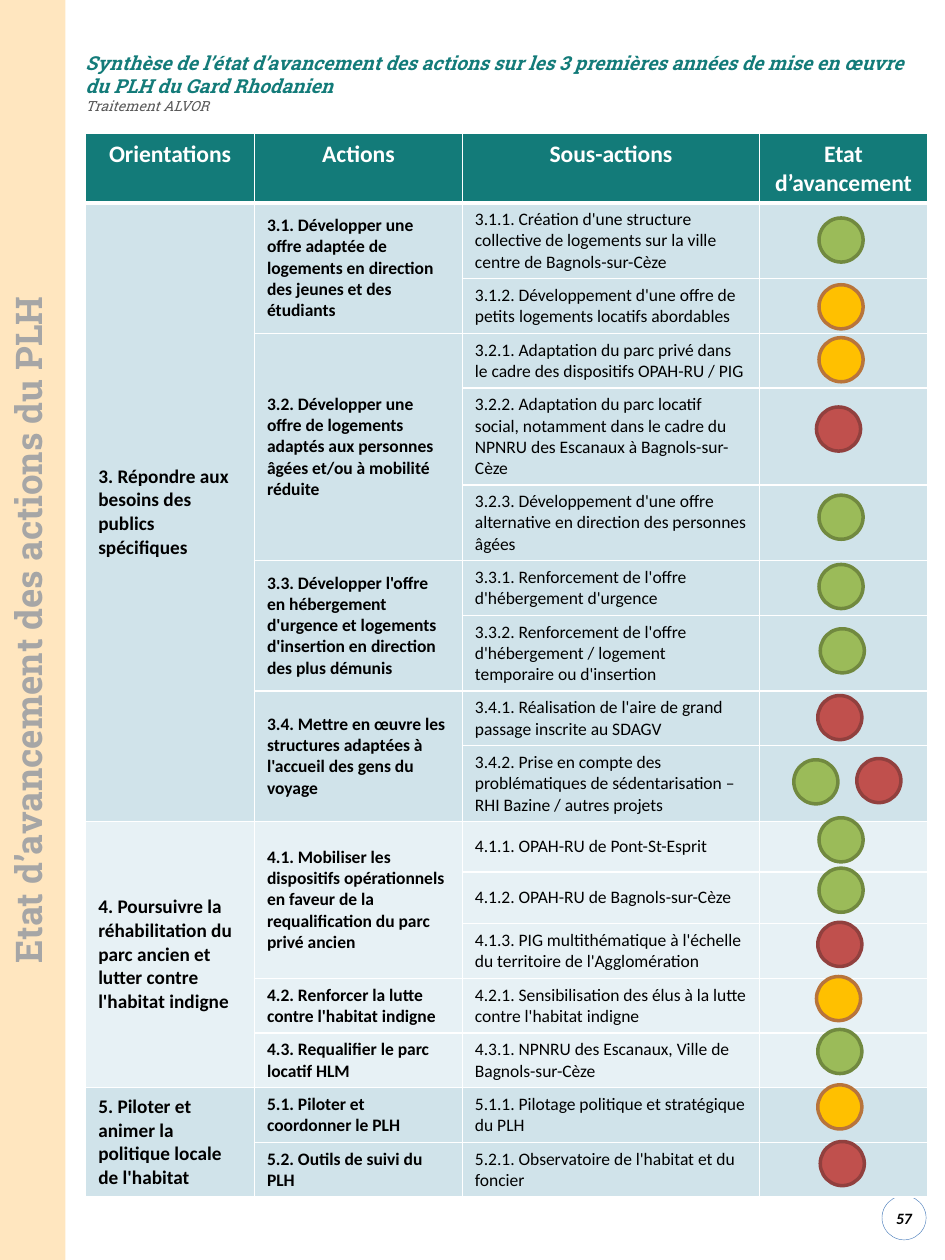
from dataclasses import dataclass

from lxml import etree
from pptx import Presentation
from pptx.dml.color import RGBColor
from pptx.enum.shapes import MSO_SHAPE
from pptx.enum.text import MSO_ANCHOR, PP_ALIGN
from pptx.oxml.ns import qn
from pptx.util import Inches, Pt

OVAL, RECTANGLE = MSO_SHAPE.OVAL, MSO_SHAPE.RECTANGLE
MIDDLE, TOP = MSO_ANCHOR.MIDDLE, MSO_ANCHOR.TOP
LEFT, CENTER = PP_ALIGN.LEFT, PP_ALIGN.CENTER


@dataclass(frozen=True)
class Theme:
    body_font: str = "Calibri"
    title_font: str = "Roboto Slab"
    teal: str = "137B79"
    white: str = "FFFFFF"
    black: str = "000000"
    grey: str = "A6A6A6"
    dark_grey: str = "595959"
    sidebar: str = "FF9D00"
    page_ring: str = "4F81BD"
    band_dark: str = "D0E3EA"
    band_light: str = "E7F1F5"
    sidebar_size: float = 21
    header_size: float = 13.5
    title_size: float = 11
    orientation_size: float = 11
    body_size: float = 10
    page_size: float = 9
    credit_size: float = 8
    grid_width: float = 0.96
    header_rule: float = 3


THEME = Theme()
STATUS = {  # fill, outline
    "done": ("9BBB59", "71893F"),
    "ongoing": ("FFC000", "B8743B"),
    "late": ("C0504D", "91403E"),
}

HEADERS = ["Orientations", "Actions", "Sous-actions", "Etat d’avancement"]
COLUMN_WIDTHS = [1.34, 1.65, 2.36, 1.33]
ROW_HEIGHTS = [0.47, 0.51, 0.41, 0.41, 0.66, 0.51, 0.41, 0.51, 0.41, 0.51, 0.35] + [0.41] * 6
PLAN = [  # orientation, fill, [(action, [sub-actions])]
    ("3. Répondre aux besoins des publics spécifiques", THEME.band_dark, [
        ("3.1. Développer une offre adaptée de logements en direction des jeunes et des étudiants", [
            "3.1.1. Création d'une structure collective de logements sur la ville centre de Bagnols-sur-Cèze",
            "3.1.2. Développement d'une offre de petits logements locatifs abordables"]),
        ("3.2. Développer une offre de logements adaptés aux personnes âgées et/ou à mobilité réduite", [
            "3.2.1. Adaptation du parc privé dans le cadre des dispositifs OPAH-RU / PIG",
            "3.2.2. Adaptation du parc locatif social, notamment dans le cadre du NPNRU "
            "des Escanaux à Bagnols-sur-Cèze",
            "3.2.3. Développement d'une offre alternative en direction des personnes âgées"]),
        ("3.3. Développer l'offre en hébergement d'urgence et logements d'insertion "
         "en direction des plus démunis", [
            "3.3.1. Renforcement de l'offre d'hébergement d'urgence",
            "3.3.2. Renforcement de l'offre d'hébergement / logement temporaire ou d'insertion"]),
        ("3.4. Mettre en œuvre les structures adaptées à l'accueil des gens du voyage", [
            "3.4.1. Réalisation de l'aire de grand passage inscrite au SDAGV",
            "3.4.2. Prise en compte des problématiques de sédentarisation – RHI Bazine / autres projets"]),
    ]),
    ("4. Poursuivre la réhabilitation du parc ancien et lutter contre l'habitat indigne", THEME.band_light, [
        ("4.1. Mobiliser les dispositifs opérationnels en faveur de la requalification du parc privé ancien", [
            "4.1.1. OPAH-RU de Pont-St-Esprit",
            "4.1.2. OPAH-RU de Bagnols-sur-Cèze",
            "4.1.3. PIG multithématique à l'échelle du territoire de l'Agglomération"]),
        ("4.2. Renforcer la lutte contre l'habitat indigne", [
            "4.2.1. Sensibilisation des élus à la lutte contre l'habitat indigne"]),
        ("4.3. Requalifier le parc locatif HLM", [
            "4.3.1. NPNRU des Escanaux, Ville de Bagnols-sur-Cèze"]),
    ]),
    ("5. Piloter et animer la politique locale de l'habitat", THEME.band_dark, [
        ("5.1. Piloter et coordonner le PLH", ["5.1.1. Pilotage politique et stratégique du PLH"]),
        ("5.2. Outils de suivi du PLH", ["5.2.1. Observatoire de l'habitat et du foncier"]),
    ]),
]
DOTS = [  # status, left and top inside the last column
    ("done", 0.47, 0.67), ("ongoing", 0.47, 1.2), ("ongoing", 0.47, 1.62), ("late", 0.45, 2.17),
    ("done", 0.47, 2.87), ("done", 0.47, 3.42), ("done", 0.48, 3.93), ("late", 0.46, 4.46),
    ("done", 0.27, 4.97), ("late", 0.77, 4.96), ("done", 0.47, 5.43), ("done", 0.47, 5.83),
    ("late", 0.46, 6.26), ("ongoing", 0.45, 6.69), ("done", 0.46, 7.11), ("ongoing", 0.46, 7.55),
    ("late", 0.48, 8.0),
]
DOT_SIZE = 0.35


def inches(box):
    return [Inches(value) for value in box]


def write(paragraph, text, *, size, color, font=THEME.body_font, bold=False, italic=False, align=LEFT):
    paragraph.alignment = align
    run = paragraph.add_run()
    run.text = text
    run.font.name = font
    run.font.size = Pt(size)
    run.font.bold = bold
    run.font.italic = italic
    run.font.color.rgb = RGBColor.from_string(color)


def add_plain_shape(slide, kind, box, *, fill=None, line=None, line_width=0):
    shape = slide.shapes.add_shape(kind, *inches(box))
    shape.shadow.inherit = False
    if fill:
        shape.fill.solid()
        shape.fill.fore_color.rgb = RGBColor.from_string(fill)
    else:
        shape.fill.background()
    if line:
        shape.line.color.rgb = RGBColor.from_string(line)
        shape.line.width = Pt(line_width)
    else:
        shape.line.fill.background()
    return shape


def add_page_number(slide, box, number):
    ring = add_plain_shape(slide, OVAL, box, line=THEME.page_ring, line_width=0.25)
    frame = ring.text_frame
    frame.margin_left = frame.margin_right = frame.margin_top = frame.margin_bottom = 0
    frame.vertical_anchor = MIDDLE
    write(frame.paragraphs[0], number, size=THEME.page_size, color=THEME.black,
          bold=True, italic=True, align=CENTER)


def add_sidebar(slide, box, text):
    left, top, width, height = box
    band = add_plain_shape(slide, RECTANGLE, box, fill=THEME.sidebar)
    color = band.fill._xPr.find(".//" + qn("a:srgbClr"))
    etree.SubElement(color, qn("a:alpha"), val="25000")
    offset = (height - width) / 2
    label = slide.shapes.add_textbox(*inches((left - offset, top + offset, height, width)))
    label.rotation = 270
    label.text_frame.word_wrap = True
    write(label.text_frame.paragraphs[0], text, size=THEME.sidebar_size, color=THEME.grey,
          font=THEME.title_font, bold=True, align=CENTER)


def add_heading(slide, box, title, credit):
    frame = slide.shapes.add_textbox(*inches(box)).text_frame
    frame.word_wrap = True
    write(frame.paragraphs[0], title, size=THEME.title_size, color=THEME.teal,
          font=THEME.title_font, bold=True, italic=True)
    write(frame.add_paragraph(), credit, size=THEME.credit_size, color=THEME.dark_grey,
          font=THEME.title_font, italic=True)


def style_cell(cell, fill, thick_side=None):
    """Draw white borders, with one optional thick side, then fill the cell."""
    properties = cell._tc.get_or_add_tcPr()
    for side in "LRTB":
        width = THEME.header_rule if side == thick_side else THEME.grid_width
        line = etree.SubElement(properties, qn(f"a:ln{side}"), w=str(Pt(width)))
        solid = etree.SubElement(line, qn("a:solidFill"))
        etree.SubElement(solid, qn("a:srgbClr"), val=THEME.white)
    cell.fill.solid()
    cell.fill.fore_color.rgb = RGBColor.from_string(fill)


def write_cell(cell, text, anchor=MIDDLE, **text_format):
    cell.vertical_anchor = anchor
    write(cell.text_frame.paragraphs[0], text, **text_format)


def add_progress_table(slide, box):
    table = slide.shapes.add_table(len(ROW_HEIGHTS), len(HEADERS), *inches(box)).table
    table.horz_banding = False
    for column, width in zip(table.columns, COLUMN_WIDTHS):
        column.width = Inches(width)
    for row, height in zip(table.rows, ROW_HEIGHTS):
        row.height = Inches(height)
    for index, header in enumerate(HEADERS):
        cell = table.cell(0, index)
        style_cell(cell, THEME.teal, "B")
        write_cell(cell, header, TOP, size=THEME.header_size, color=THEME.white, bold=True, align=CENTER)

    body = {"size": THEME.body_size, "color": THEME.black}
    row = 1
    for orientation, fill, actions in PLAN:
        first_row = row
        for action, sub_actions in actions:
            action_row = row
            for sub_action in sub_actions:
                for index in range(len(HEADERS)):
                    style_cell(table.cell(row, index), fill, "T" if row == 1 else None)
                write_cell(table.cell(row, 2), sub_action, **body)
                row += 1
            write_cell(table.cell(action_row, 1), action, bold=True, **body)
            if row - action_row > 1:
                table.cell(action_row, 1).merge(table.cell(row - 1, 1))
        write_cell(table.cell(first_row, 0), orientation, size=THEME.orientation_size,
                   color=THEME.black, bold=True)
        table.cell(first_row, 0).merge(table.cell(row - 1, 0))


def add_status_dots(slide, left, top):
    for status, across, down in DOTS:
        fill, line = STATUS[status]
        add_plain_shape(slide, OVAL, (left + across, top + down, DOT_SIZE, DOT_SIZE),
                        fill=fill, line=line, line_width=2)


def main():
    presentation = Presentation()
    presentation.slide_width, presentation.slide_height = Inches(7.5), Inches(10)
    slide = presentation.slides.add_slide(presentation.slide_layouts[6])
    table_left, table_top = 0.68, 1.06
    add_page_number(slide, (7, 9.49, 0.35, 0.35), "57")
    add_sidebar(slide, (0, 0, 0.52, 10), "Etat d’avancement des actions du PLH")
    add_heading(slide, (0.58, 0.36, 6.78, 0.62),
                "Synthèse de l’état d’avancement des actions sur les 3 premières années "
                "de mise en œuvre du PLH du Gard Rhodanien", "Traitement ALVOR")
    add_progress_table(slide, (table_left, table_top, sum(COLUMN_WIDTHS), sum(ROW_HEIGHTS)))
    add_status_dots(slide, table_left + sum(COLUMN_WIDTHS[:3]), table_top)
    presentation.save("out.pptx")


if __name__ == "__main__":
    main()
